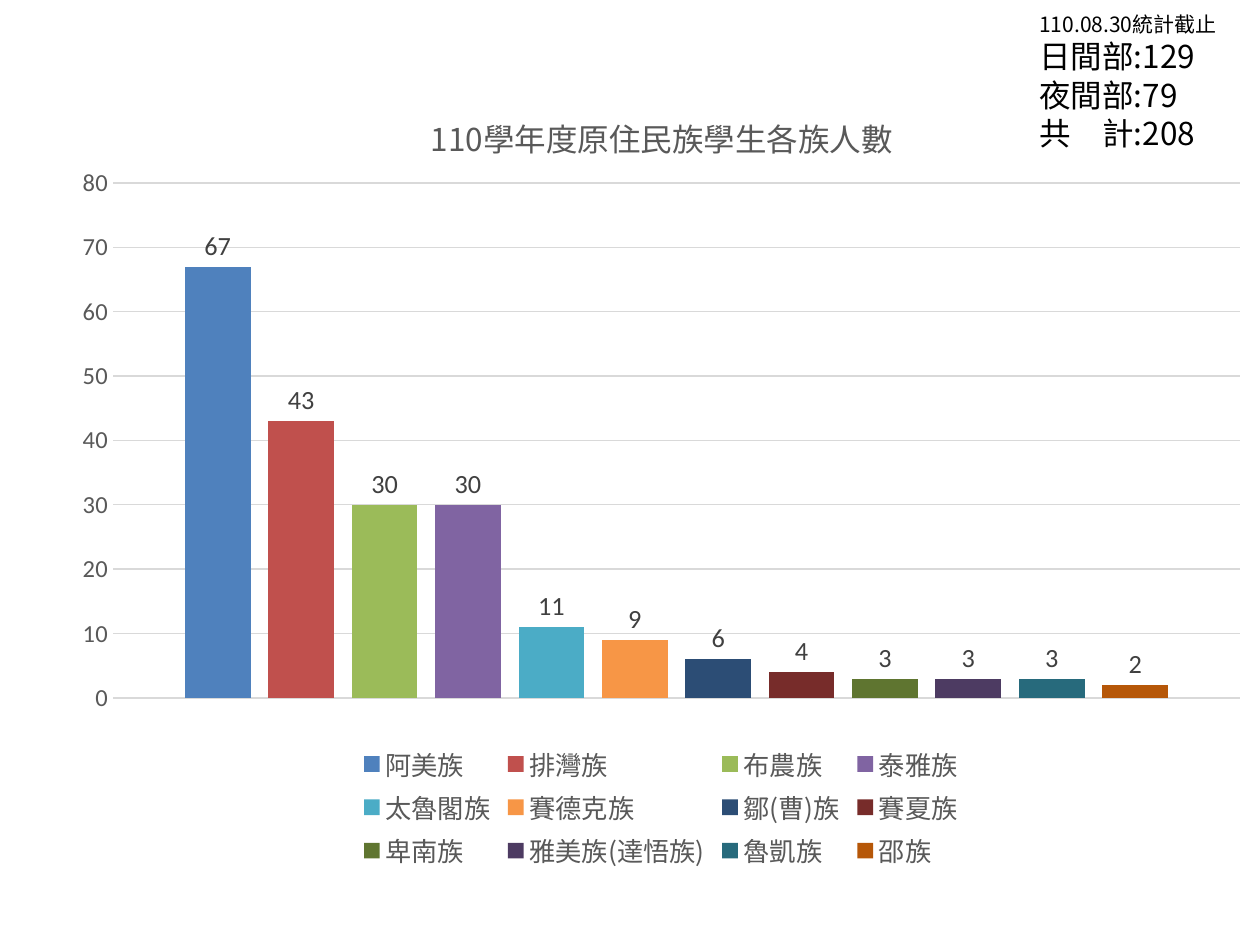
from dataclasses import dataclass

import lxml.etree
import pptx
import pptx.chart.data
import pptx.dml.color
import pptx.enum.chart
import pptx.enum.text
import pptx.oxml.ns
import pptx.util

EMU_PER_PX = 914400 / 126


@dataclass(frozen=True)
class Theme:
    latin: str = "Calibri"
    cjk: str = "Noto Sans CJK JP"
    ink: str = "000000"
    muted: str = "595959"
    label: str = "404040"
    grid: str = "D9D9D9"
    title_size: int = 18
    label_size: int = 15
    tick_size: int = 14
    base_size: int = 10
    date_size: int = 12
    total_size: int = 18


@dataclass(frozen=True)
class Box:
    left: int
    top: int
    width: int
    height: int

    def emu(self) -> list:
        return [px(n) for n in (self.left, self.top, self.width, self.height)]


@dataclass(frozen=True)
class Tribe:
    name: str
    students: int
    color: str


THEME = Theme()
CHART_BOX = Box(58, 71, 1206, 804)
TOTALS_BOX = Box(1027, 4, 255, 152)
PLOT_BOX = Box(113, 183, 1127, 515)
TITLE_BOX = Box(425, 105, 471, 40)

TRIBES = [
    Tribe("阿美族", 67, "4F81BD"),
    Tribe("排灣族", 43, "C0504D"),
    Tribe("布農族", 30, "9BBB59"),
    Tribe("泰雅族", 30, "8064A2"),
    Tribe("太魯閣族", 11, "4BACC6"),
    Tribe("賽德克族", 9, "F79646"),
    Tribe("鄒(曹)族", 6, "2C4D75"),
    Tribe("賽夏族", 4, "772C2A"),
    Tribe("卑南族", 3, "5F7530"),
    Tribe("雅美族(達悟族)", 3, "4D3B62"),
    Tribe("魯凱族", 3, "276A7C"),
    Tribe("邵族", 2, "B65708"),
]


def px(length: int) -> int:
    return pptx.util.Emu(round(length * EMU_PER_PX))


def rgb(color: str) -> pptx.dml.color.RGBColor:
    return pptx.dml.color.RGBColor.from_string(color)


def style_font(font, *, size: int, color: str, face: str) -> None:
    font.size = pptx.util.Pt(size)
    font.bold = False
    font.color.rgb = rgb(color)
    font.name = face
    # East Asian characters take their own typeface element
    east_asian = lxml.etree.SubElement(font._rPr, pptx.oxml.ns.qn("a:ea"))
    east_asian.set("typeface", face)


def write(paragraph, text: str, *, size: int, color: str, face: str,
          line_height: int | None = None) -> None:
    run = paragraph.add_run()
    run.text = text
    style_font(run.font, size=size, color=color, face=face)
    if line_height:
        paragraph.line_spacing = pptx.util.Pt(line_height)


def place_in_chart(parent, index: int, box: Box, inner: bool = False) -> None:
    """Give a chart part a fixed place, as fractions of the chart."""
    qn = pptx.oxml.ns.qn
    for automatic in parent.findall(qn("c:layout")):
        parent.remove(automatic)
    layout = lxml.etree.Element(qn("c:layout"))
    manual = lxml.etree.SubElement(layout, qn("c:manualLayout"))
    settings = [("layoutTarget", "inner")] if inner else []
    settings += [("xMode", "edge"), ("yMode", "edge"),
                 ("x", (box.left - CHART_BOX.left) / CHART_BOX.width),
                 ("y", (box.top - CHART_BOX.top) / CHART_BOX.height)]
    if inner:
        settings += [("w", box.width / CHART_BOX.width),
                     ("h", box.height / CHART_BOX.height)]
    for tag, value in settings:
        lxml.etree.SubElement(manual, qn(f"c:{tag}")).set("val", str(value))
    parent.insert(index, layout)


def draw_chart(slide, tribes: list[Tribe]) -> None:
    counts = pptx.chart.data.CategoryChartData()
    counts.categories = ["1"]
    for tribe in tribes:
        counts.add_series(tribe.name, [tribe.students])
    chart = slide.shapes.add_chart(
        pptx.enum.chart.XL_CHART_TYPE.COLUMN_CLUSTERED,
        *CHART_BOX.emu(), counts).chart
    style_font(chart.font, size=THEME.base_size, color=THEME.ink, face=THEME.latin)

    # Title
    chart.has_title = True
    heading = chart.chart_title
    write(heading.text_frame.paragraphs[0], "110學年度原住民族學生各族人數",
          size=THEME.title_size, color=THEME.muted, face=THEME.cjk)
    heading.include_in_layout = False
    place_in_chart(heading._element, 1, TITLE_BOX)

    # Columns and their values
    columns = chart.plots[0]
    columns.gap_width = 219
    columns.overlap = -27
    columns.vary_by_categories = False
    for series, tribe in zip(columns.series, tribes):
        series.format.fill.solid()
        series.format.fill.fore_color.rgb = rgb(tribe.color)
        labels = series.data_labels
        labels.show_value = True
        labels.position = pptx.enum.chart.XL_LABEL_POSITION.OUTSIDE_END
        style_font(labels.font, size=THEME.label_size, color=THEME.label,
                   face=THEME.latin)
    place_in_chart(chart._chartSpace.chart.plotArea, 0, PLOT_BOX, inner=True)

    # Axes
    chart.category_axis.visible = False
    scale = chart.value_axis
    scale.minimum_scale, scale.maximum_scale, scale.major_unit = 0, 80, 10
    scale.major_tick_mark = pptx.enum.chart.XL_TICK_MARK.NONE
    scale.minor_tick_mark = pptx.enum.chart.XL_TICK_MARK.NONE
    scale.format.line.fill.background()
    gridline = scale.major_gridlines.format.line
    gridline.color.rgb = rgb(THEME.grid)
    gridline.width = pptx.util.Pt(0.75)
    style_font(scale.tick_labels.font, size=THEME.tick_size, color=THEME.muted,
               face=THEME.latin)

    # Legend
    chart.has_legend = True
    chart.legend.position = pptx.enum.chart.XL_LEGEND_POSITION.BOTTOM
    chart.legend.include_in_layout = False
    style_font(chart.legend.font, size=THEME.label_size, color=THEME.muted,
               face=THEME.cjk)


def draw_totals(slide) -> None:
    frame = slide.shapes.add_textbox(*TOTALS_BOX.emu()).text_frame
    frame.word_wrap = True
    frame.auto_size = pptx.enum.text.MSO_AUTO_SIZE.SHAPE_TO_FIT_TEXT
    write(frame.paragraphs[0], "110.08.30統計截止", size=THEME.date_size,
          color=THEME.ink, face=THEME.cjk, line_height=15)
    for total in ("日間部:129", "夜間部:79", "共　計:208"):
        write(frame.add_paragraph(), total, size=THEME.total_size,
              color=THEME.ink, face=THEME.cjk, line_height=22)


def main() -> None:
    deck = pptx.Presentation()
    deck.slide_width = pptx.util.Inches(10)
    deck.slide_height = pptx.util.Inches(7.5)
    slide = deck.slides.add_slide(deck.slide_layouts[6])
    draw_chart(slide, TRIBES)
    draw_totals(slide)
    deck.save("out.pptx")


if __name__ == "__main__":
    main()
